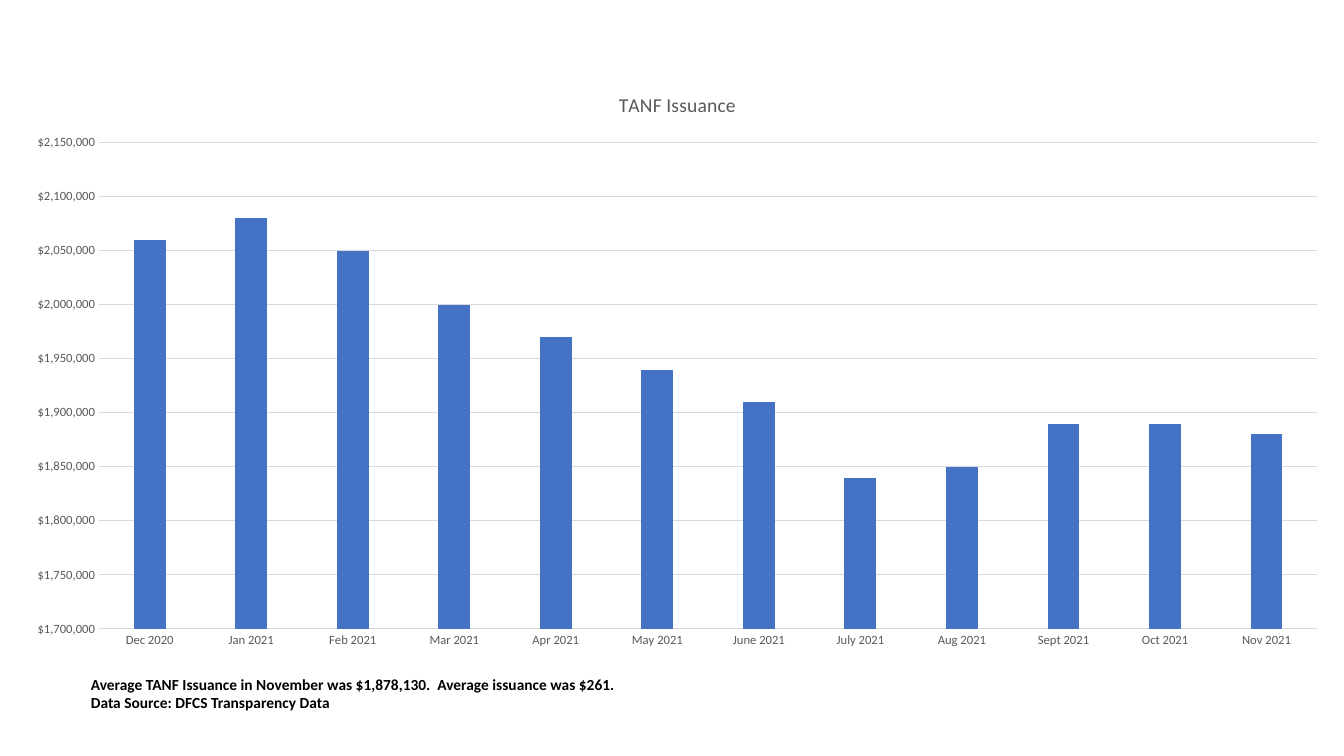
from pptx import Presentation
from pptx import util as u
from pptx.chart.data import CategoryChartData
from pptx.dml.color import RGBColor
from pptx.enum import chart as ch, text

COLORS = {"bar": "4472C4", "label": "595959", "grid": "D9D9D9", "note": "000000"}
FONT = "Calibri"
ISSUANCE = {
    "Dec 2020": 2060000,
    "Jan 2021": 2080000,
    "Feb 2021": 2050000,
    "Mar 2021": 2000000,
    "Apr 2021": 1970000,
    "May 2021": 1940000,
    "June 2021": 1910000,
    "July 2021": 1840000,
    "Aug 2021": 1850000,
    "Sept 2021": 1890000,
    "Oct 2021": 1890000,
    "Nov 2021": 1880000,
}
NOTES = [
    "Average TANF Issuance in November was $1,878,130.  Average issuance was $261.",
    "Data Source: DFCS Transparency Data",
]


def style_font(font, size, color, bold=False):
    font.name = FONT
    font.size = u.Pt(size)
    font.bold = bold
    font.color.rgb = RGBColor.from_string(COLORS[color])


def style_line(line):
    line.width = u.Pt(0.75)
    line.color.rgb = RGBColor.from_string(COLORS["grid"])


prs = Presentation()
prs.slide_width, prs.slide_height = u.Pt(960), u.Pt(540)
s = prs.slides.add_slide(prs.slide_layouts[6])

tf = s.shapes.add_textbox(u.Pt(57.8), u.Pt(478.4), u.Pt(902), u.Pt(34)).text_frame
tf.word_wrap = True
tf.auto_size = text.MSO_AUTO_SIZE.SHAPE_TO_FIT_TEXT
tf.text = "\n".join(NOTES)
for p in tf.paragraphs:
    for r in p.runs:
        style_font(r.font, 11, "note", True)

data = CategoryChartData(number_format='"$"#,##0')
data.categories = list(ISSUANCE)
data.add_series("TANF Issuance", list(ISSUANCE.values()))
chart = s.shapes.add_chart(
    ch.XL_CHART_TYPE.COLUMN_CLUSTERED,
    u.Pt(7.8), u.Pt(50.4), u.Pt(952.2), u.Pt(420.5), data,
).chart
style_font(chart.font, 10, "note")
chart.has_legend = False
chart.has_title = True
tf = chart.chart_title.text_frame
tf.text = "TANF Issuance"
style_font(tf.paragraphs[0].runs[0].font, 14, "label")
chart.chart_title.include_in_layout = False

plot = chart.plots[0]
plot.vary_by_categories = False
plot.gap_width = 219
plot.overlap = -27
fill = plot.series[0].format.fill
fill.solid()
fill.fore_color.rgb = RGBColor.from_string(COLORS["bar"])

for axis in (chart.category_axis, chart.value_axis):
    axis.major_tick_mark = ch.XL_TICK_MARK.NONE
    axis.minor_tick_mark = ch.XL_TICK_MARK.NONE
    style_font(axis.tick_labels.font, 9, "label")

style_line(chart.category_axis.format.line)
axis = chart.value_axis
axis.minimum_scale, axis.maximum_scale, axis.major_unit = 1700000, 2150000, 50000
axis.tick_labels.number_format = '"$"#,##0'
axis.tick_labels.number_format_is_linked = False
axis.format.line.fill.background()
axis.has_major_gridlines = True
style_line(axis.major_gridlines.format.line)

prs.save("out.pptx")
